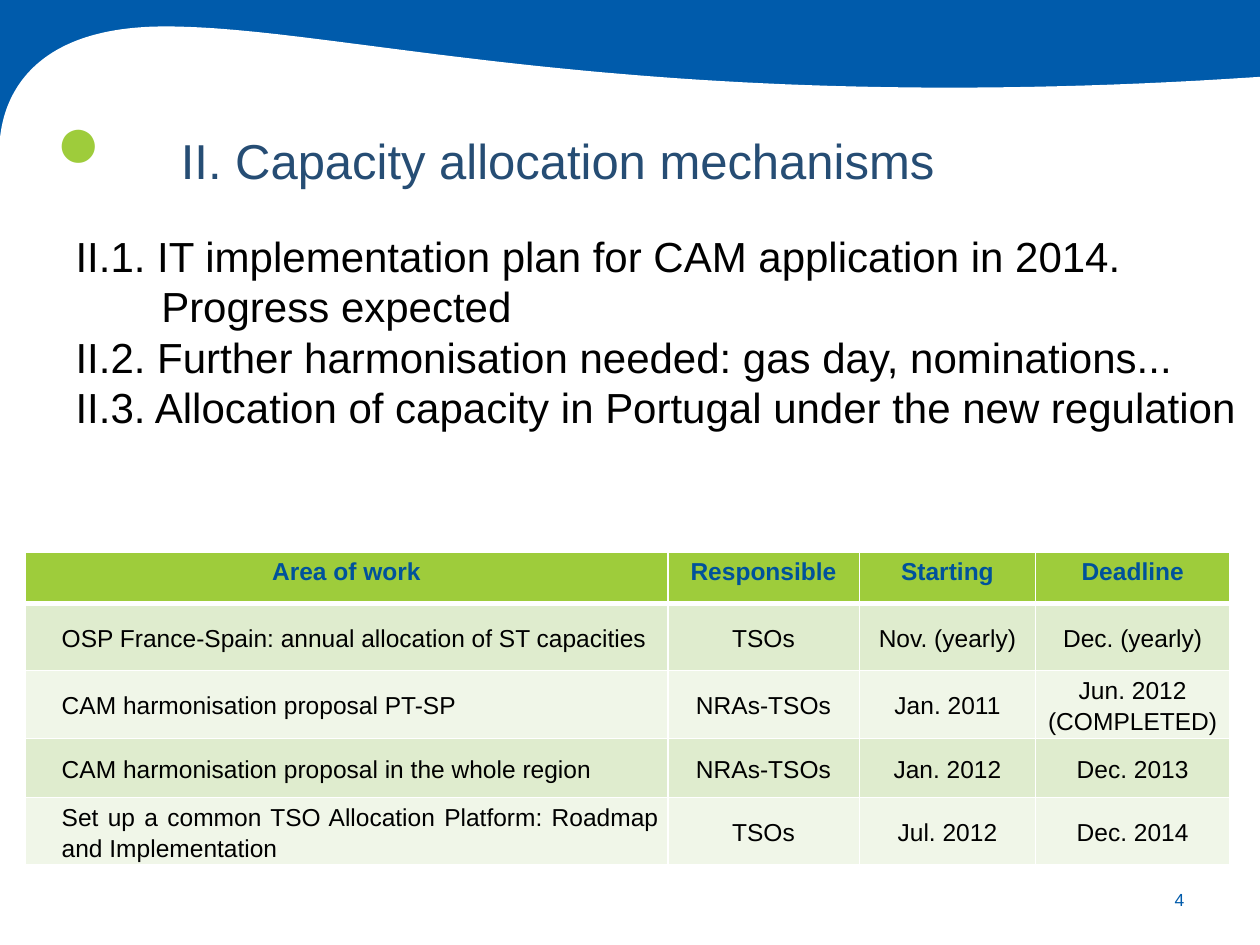
"""Build the slide on capacity allocation mechanisms with its work plan table."""
from lxml import etree
from pptx import Presentation
from pptx.dml.color import RGBColor
from pptx.enum.shapes import MSO_SHAPE
from pptx.enum.text import MSO_ANCHOR, MSO_AUTO_SIZE, PP_ALIGN
from pptx.oxml.ns import qn
from pptx.util import Inches, Pt

RECTANGLE = MSO_SHAPE.RECTANGLE
TOP, MIDDLE, BOTTOM = MSO_ANCHOR.TOP, MSO_ANCHOR.MIDDLE, MSO_ANCHOR.BOTTOM
NO_AUTOFIT = MSO_AUTO_SIZE.NONE
CENTER, JUSTIFY = PP_ALIGN.CENTER, PP_ALIGN.JUSTIFY

WHITE = RGBColor(0xFF, 0xFF, 0xFF)
BLACK = RGBColor(0, 0, 0)
BLUE = RGBColor(0x00, 0x5B, 0xAB)
TITLE_BLUE = RGBColor(0x26, 0x4D, 0x74)
HEADER_BLUE = RGBColor(0x00, 0x52, 0x9B)
GREEN = RGBColor(0x9E, 0xCC, 0x3B)
BAND_COLORS = (RGBColor(0xDF, 0xEC, 0xCE), RGBColor(0xF0, 0xF6, 0xE8))
FONT = "Arial"

TITLE = "II. Capacity allocation mechanisms"
TOPICS = [
    "II.1. IT implementation plan for CAM application in 2014. Progress expected",
    "II.2. Further harmonisation needed: gas day, nominations...",
    "II.3. Allocation of capacity in Portugal under the new regulation",
]
PLAN = [
    ("Area of work", "Responsible", "Starting", "Deadline"),
    ("OSP France-Spain: annual allocation of ST capacities", "TSOs", "Nov. (yearly)", "Dec. (yearly)"),
    ("CAM harmonisation proposal PT-SP", "NRAs-TSOs", "Jan. 2011", "Jun. 2012 (COMPLETED)"),
    ("CAM harmonisation proposal in the whole region", "NRAs-TSOs", "Jan. 2012", "Dec. 2013"),
    ("Set up a common TSO Allocation Platform: Roadmap and Implementation", "TSOs", "Jul. 2012", "Dec. 2014"),
]
COLUMN_WIDTHS = (5.1, 1.52, 1.4, 1.54)
ROW_HEIGHTS = (0.41, 0.53, 0.54, 0.47, 0.53)
WAVE_CURVES = [
    ((0, 1.1), (0.03, 0.79), (0.23, 0.21), (1.31, 0.21)),
    ((1.31, 0.21), (2.76, 0.21), (5.1, 0.94), (10, 0.61)),
]
CURVE_STEPS = 60


def curve_point(curve, t):
    weights = ((1 - t) ** 3, 3 * t * (1 - t) ** 2, 3 * t * t * (1 - t), t ** 3)
    return tuple(sum(w * point[axis] for w, point in zip(weights, curve)) for axis in (0, 1))


def fill_plain(shape, color):
    shape.shadow.inherit = False
    shape.fill.solid()
    shape.fill.fore_color.rgb = color
    shape.line.fill.background()


def add_banner(slide):
    band = slide.shapes.add_shape(RECTANGLE, 0, 0, Inches(10), Inches(1.15))
    fill_plain(band, BLUE)
    points = [curve_point(curve, step / CURVE_STEPS)
              for curve in WAVE_CURVES for step in range(CURVE_STEPS + 1)]
    builder = slide.shapes.build_freeform(0, Inches(7.5))
    builder.add_line_segments([(Inches(x), Inches(y)) for x, y in points + [(10, 7.5)]])
    fill_plain(builder.convert_to_shape(), WHITE)


def place(shape, left, top, width, height):
    shape.left, shape.top = Inches(left), Inches(top)
    shape.width, shape.height = Inches(width), Inches(height)


def set_indent(paragraph, left, first=0):
    properties = paragraph._p.get_or_add_pPr()
    properties.set("marL", str(Inches(left)))
    properties.set("indent", str(Inches(first)))


def style(paragraph, size, color, alignment=None, bold=False):
    paragraph.alignment = alignment
    for run in paragraph.runs:
        run.font.name, run.font.size, run.font.bold = FONT, Pt(size), bold
        run.font.color.rgb = color


def add_label(slide, text, box, size, color, anchor):
    label = slide.shapes.add_textbox(*map(Inches, box))
    frame = label.text_frame
    frame.text = text
    frame.word_wrap = True
    frame.vertical_anchor = anchor
    frame.margin_left = frame.margin_right = 0
    style(frame.paragraphs[0], size, color, CENTER)


def fill_title(title):
    place(title, 0, 0.89, 8.75, 0.61)
    frame = title.text_frame
    frame.text = TITLE
    frame.auto_size = NO_AUTOFIT
    frame.vertical_anchor = TOP
    paragraph = frame.paragraphs[0]
    set_indent(paragraph, 0.39, -0.29)
    paragraph.line_spacing = 1.2
    style(paragraph, 28, TITLE_BLUE, CENTER)


def fill_topics(body):
    place(body, 0, 1.78, 10, 1.72)
    frame = body.text_frame
    frame.text = "\n".join(TOPICS)
    frame.auto_size = NO_AUTOFIT
    for paragraph in frame.paragraphs:
        set_indent(paragraph, 1.18, -0.68)
        paragraph.line_spacing = Pt(28.8)
        paragraph.space_before = Pt(0)
        etree.SubElement(paragraph._p.get_or_add_pPr(), qn("a:buNone"))
        style(paragraph, 24, BLACK)


def set_borders(cell, bottom_width):
    properties = cell._tc.get_or_add_tcPr()
    for side, width in (("L", 1), ("R", 1), ("T", 1), ("B", bottom_width)):
        line = etree.SubElement(properties, qn(f"a:ln{side}"), w=str(Pt(width)))
        fill = etree.SubElement(line, qn("a:solidFill"))
        etree.SubElement(fill, qn("a:srgbClr"), val=str(WHITE))


def fill_cell(cell, text, row, column):
    header = row == 0
    cell.text = text
    paragraph = cell.text_frame.paragraphs[0]
    set_borders(cell, 3 if header else 1)
    cell.fill.solid()
    cell.fill.fore_color.rgb = GREEN if header else BAND_COLORS[(row - 1) % 2]
    if header:
        style(paragraph, 14, HEADER_BLUE, CENTER, bold=True)
        return
    cell.vertical_anchor = MIDDLE
    cell.margin_left = cell.margin_right = Inches(0.07)
    cell.margin_top = cell.margin_bottom = 0
    paragraph.line_spacing = 1.15
    if column == 0:
        set_indent(paragraph, 0.22)
    style(paragraph, 14, BLACK, CENTER if column else JUSTIFY)


def add_plan(slide):
    table = slide.shapes.add_table(
        len(PLAN), len(COLUMN_WIDTHS), Inches(0.2), Inches(4.38),
        Inches(sum(COLUMN_WIDTHS)), Inches(sum(ROW_HEIGHTS))).table
    for column, width in zip(table.columns, COLUMN_WIDTHS):
        column.width = Inches(width)
    for row, height in zip(table.rows, ROW_HEIGHTS):
        row.height = Inches(height)
    for row, texts in enumerate(PLAN):
        for column, text in enumerate(texts):
            fill_cell(table.cell(row, column), text, row, column)


def main():
    presentation = Presentation()
    presentation.slide_width, presentation.slide_height = Inches(10), Inches(7.5)
    slide = presentation.slides.add_slide(presentation.slide_layouts[1])
    title, body = slide.placeholders
    add_banner(slide)
    for placeholder in (title, body):
        slide.shapes._spTree.append(placeholder._element)
    add_label(slide, "4", (9.22, 6.94, 0.28, 0.4), 10, BLUE, MIDDLE)
    add_label(slide, "●", (0.35, 0.57, 0.55, 0.94), 44, GREEN, BOTTOM)
    fill_title(title)
    fill_topics(body)
    add_plan(slide)
    presentation.save("out.pptx")


if __name__ == "__main__":
    main()
